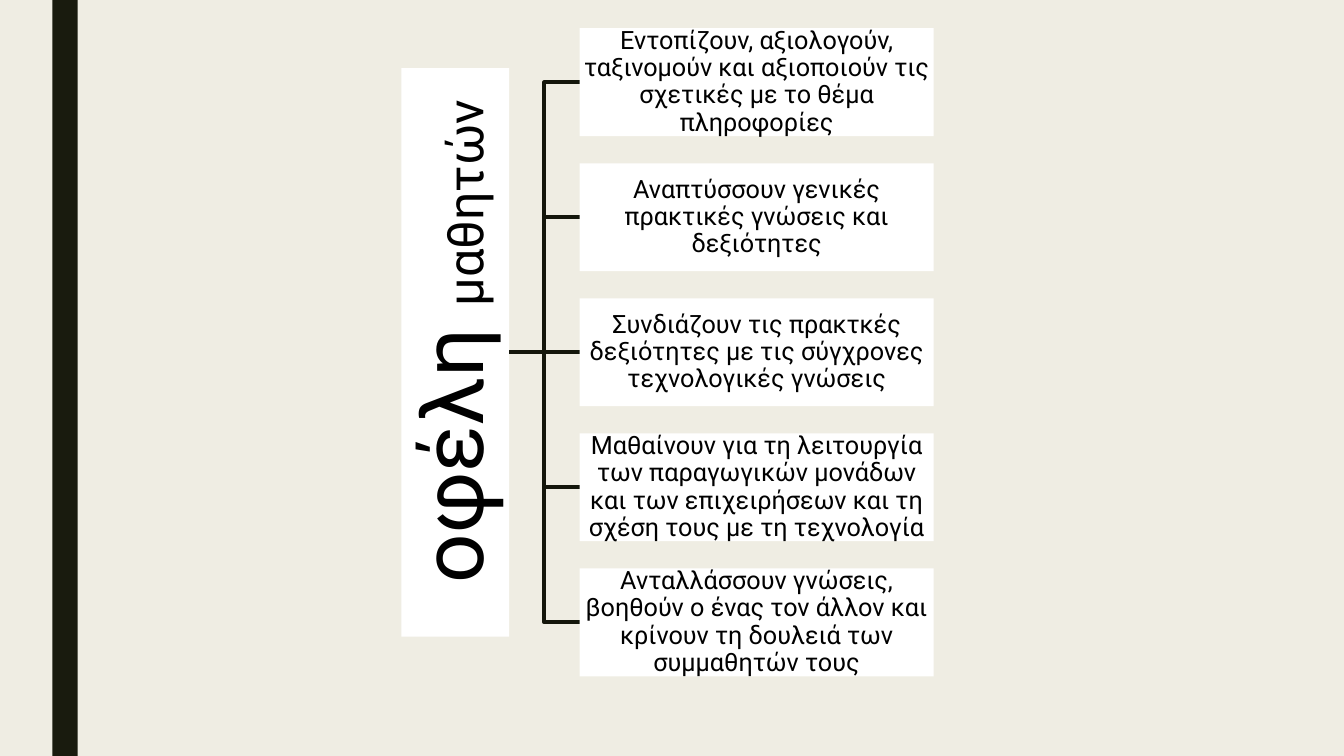
from dataclasses import dataclass
from lxml.etree import SubElement
from pptx import Presentation
from pptx.dml.color import RGBColor as RGB
from pptx.enum.shapes import MSO_CONNECTOR as Link, MSO_SHAPE as Shape
from pptx.enum.text import MSO_ANCHOR as Anchor, MSO_AUTO_SIZE as Fit, PP_ALIGN as Align
from pptx.oxml.ns import qn
from pptx.util import Inches, Pt


@dataclass(frozen=True)
class Theme:
    back: RGB = RGB(0xEF, 0xED, 0xE3)
    bar: RGB = RGB(0x19, 0x1B, 0x0E)
    line: RGB = RGB(0x14, 0x16, 0x0B)
    card: RGB = RGB(0xFF, 0xFF, 0xFF)
    ink: RGB = RGB(0, 0, 0)
    font: str = "Roboto"
    large: int = 62
    medium: int = 36
    small: int = 18
    stroke: float = 2.75


THEME = Theme()

HEAD = [(" οφέλη ", THEME.large), ("μαθητών", THEME.medium)]
GAINS = [
    "Εντοπίζουν, αξιολογούν, ταξινομούν και αξιοποιούν τις σχετικές με το θέμα πληροφορίες",
    "Αναπτύσσουν γενικές πρακτικές γνώσεις και δεξιότητες",
    "Συνδιάζουν τις πρακτκές δεξιότητες με τις σύγχρονες τεχνολογικές γνώσεις",
    "Μαθαίνουν για τη λειτουργία των παραγωγικών μονάδων και των επιχειρήσεων "
    "και τη σχέση τους με τη τεχνολογία",
    "Ανταλλάσσουν γνώσεις, βοηθούν ο ένας τον άλλον και κρίνουν τη δουλειά των "
    "συμμαθητών τους",
]


def paint(shape, color):
    shape.fill.solid()
    shape.fill.fore_color.rgb = color
    shape.line.fill.background()


def block(slide, left, top, width, height, color):
    shape = slide.shapes.add_shape(
        Shape.RECTANGLE, Inches(left), Inches(top), Inches(width), Inches(height))
    shape.shadow.inherit = False
    paint(shape, color)
    return shape


def write(shape, parts, inset):
    """Fill the shape with one centred paragraph of (text, size) runs."""
    frame = shape.text_frame
    frame.word_wrap = True
    frame.auto_size = Fit.NONE
    frame.vertical_anchor = Anchor.MIDDLE
    frame.margin_left = frame.margin_right = Inches(inset)
    frame.margin_top = frame.margin_bottom = Inches(inset)
    para = frame.paragraphs[0]
    para.alignment = Align.CENTER
    para.line_spacing = 0.9
    para.space_before = Pt(0)
    for text, size in parts:
        run = para.add_run()
        run.text = text
        run.font.name = THEME.font
        run.font.size = Pt(size)
        run.font.color.rgb = THEME.ink


def root(slide, left, top, width, height):
    """Turn the title upright inside the given box, reading upwards."""
    title = slide.shapes.title
    title.left = Inches(left + (width - height) / 2)
    title.top = Inches(top + (height - width) / 2)
    title.width, title.height = Inches(height), Inches(width)
    title.rotation = 270
    paint(title, THEME.card)
    write(title, HEAD, 0.04)


def branch(slide, x, y, end, level):
    kind = Link.STRAIGHT if y == level else Link.ELBOW
    link = slide.shapes.add_connector(
        kind, Inches(x), Inches(y), Inches(end), Inches(level))
    link.line.color.rgb = THEME.line
    link.line.width = Pt(THEME.stroke)
    SubElement(link._element.spPr, qn("a:effectLst"))


def tree(slide, left, top, width, height):
    """Place the root, its links and an even column of cards in the box."""
    thick, gap, tall = 1.07, 0.7, 5.64
    step = (height - thick) / (len(GAINS) - 1)
    middle = top + height / 2
    column = left + thick + gap
    levels = [top + thick / 2 + step * i for i in range(len(GAINS))]
    levels[len(GAINS) // 2] = middle
    for level in levels:
        branch(slide, left + thick, middle, column, level)
    root(slide, left, middle - tall / 2, thick, tall)
    for text, level in zip(GAINS, levels):
        card = block(slide, column, level - thick / 2,
                     width - thick - gap, thick, THEME.card)
        write(card, [(text, THEME.small)], 0.01)


def main():
    deck = Presentation()
    deck.slide_width, deck.slide_height = Inches(13.33), Inches(7.5)
    slide = deck.slides.add_slide(deck.slide_layouts.get_by_name("Title Only"))
    slide.background.fill.solid()
    slide.background.fill.fore_color.rgb = THEME.back
    block(slide, 0.52, 0, 0.25, 7.5, THEME.bar)
    tree(slide, 3.98, 0.28, 5.28, 6.43)
    deck.save("out.pptx")


if __name__ == "__main__":
    main()
